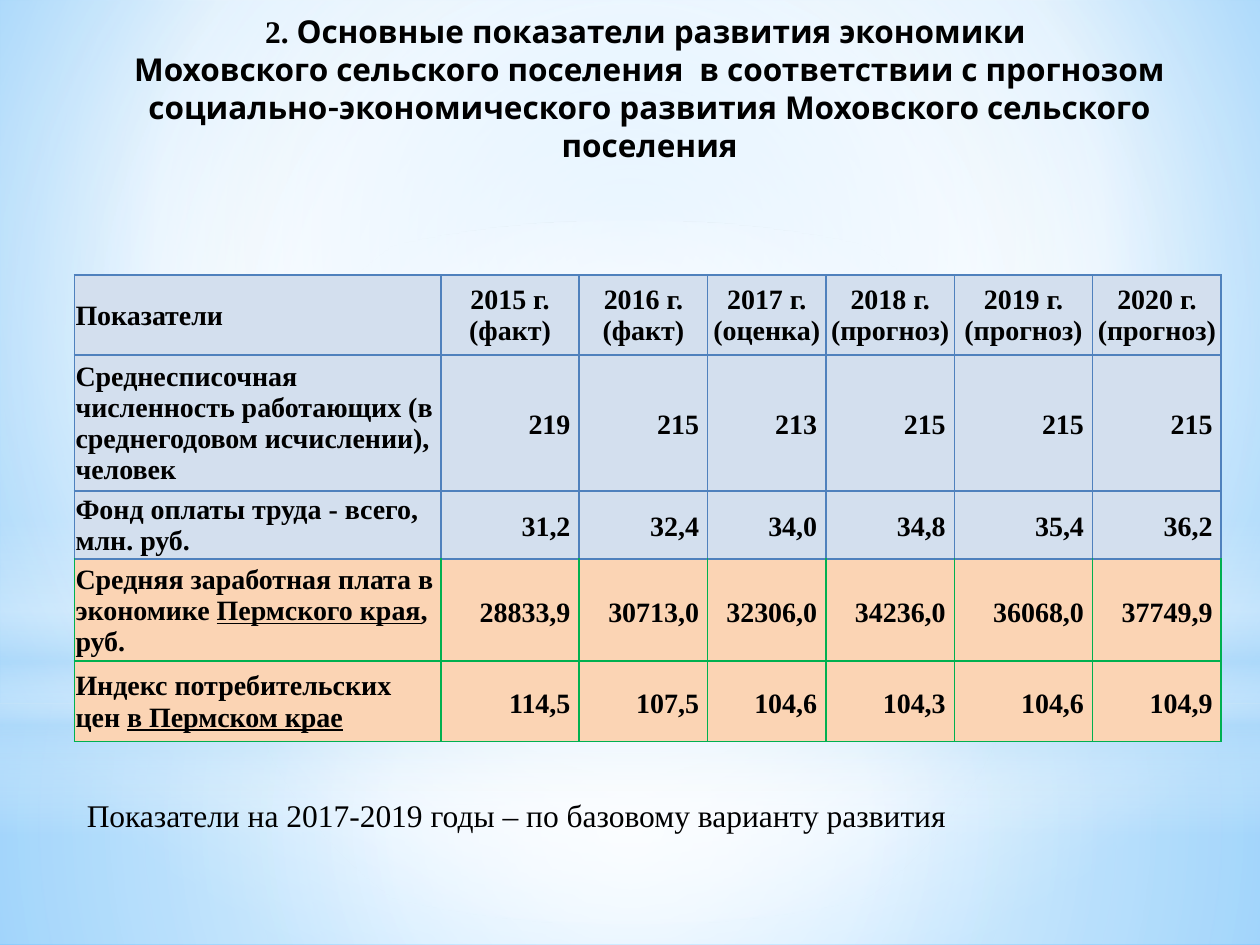
from lxml import etree
from pptx import Presentation
from pptx.dml.color import RGBColor
from pptx.enum import shapes, text
from pptx.oxml import ns
from pptx.util import Pt

SERIF, SANS = "Times New Roman", "Karla"
BLUE, GREEN = "4F81BD", "00B050"
PALE_BLUE, PEACH = "D3DFEE", "FBD4B4"
LEFT, CENTER, RIGHT = text.PP_ALIGN.LEFT, text.PP_ALIGN.CENTER, text.PP_ALIGN.RIGHT
MIDDLE = (50, 50, 50, 50)

BACKDROP = ([(0, "9ED5FF", 100), (60, "FFFFFF", 100), (100, "5BB9FF", 100)], (20, 10, 20, 60))
GLOWS = [
    ("RECTANGLE", 402, 138, [(0, "FFFFFF", 91), (37, "FFFFFF", 76), (100, "B4DCFA", 79)], MIDDLE),
    ("RECTANGLE", 0, 402, [(0, "FFFFFF", 89), (48, "FFFFFF", 62), (100, "B4DCFA", 79)], MIDDLE),
    ("RECTANGLE", 297, 180, [(0, "FFFFFF", 0), (29, "FFFFFF", 30), (45, "B4DCFA", 40),
                             (55, "FFFFFF", 26), (65, "B4DCFA", 60), (100, "FFFFFF", 0)], None),
    ("OVAL", 126, 402, [(0, "FFFFFF", 100), (56, "FFFFFF", 0)], MIDDLE),
]

TITLE = [
    [("2. ", SERIF), ("Основные показатели развития экономики ", SANS)],
    [("Моховского сельского поселения  в соответствии с прогнозом "
      "социально-экономического развития Моховского сельского поселения", SANS)],
]
NOTE = [[("Показатели на 2017-2019 годы – по базовому варианту развития", SERIF)]]

YEARS = [("2015", "факт"), ("2016", "факт"), ("2017", "оценка"),
         ("2018", "прогноз"), ("2019", "прогноз"), ("2020", "прогноз")]
ROWS = [
    (["Показатели"], [f"{year} г. ({kind})" for year, kind in YEARS]),
    (["Среднесписочная численность работающих (в среднегодовом исчислении), человек"],
     ["219", "215", "213", "215", "215", "215"]),
    (["Фонд оплаты труда - всего, млн. руб."],
     ["31,2", "32,4", "34,0", "34,8", "35,4", "36,2"]),
    (["Средняя заработная плата в экономике ", "Пермского края", ", руб."],
     ["28833,9", "30713,0", "32306,0", "34236,0", "36068,0", "37749,9"]),
    (["Индекс потребительских цен ", "в Пермском крае"],
     ["114,5", "107,5", "104,6", "104,3", "104,6", "104,9"]),
]
COL_WIDTHS = [209.5, 79, 73.5, 67.5, 73.5, 79, 73.5]
ROW_HEIGHTS = [46, 68.5, 24, 46, 46]
FIRST_GREEN_ROW = 3


def rgb(value):
    return RGBColor.from_string(value)


def assign(target, **values):
    for name, value in values.items():
        setattr(target, name, value)


def child(parent, tag, **attrs):
    return etree.SubElement(parent, ns.qn(tag), {k: str(v) for k, v in attrs.items()})


def gradient(fill, holder, stops, focus):
    fill.gradient()
    grad = holder.find(".//" + ns.qn("a:gradFill"))
    for old in list(grad):
        grad.remove(old)
    stop_list = child(grad, "a:gsLst")
    for position, color, alpha in stops:
        stop = child(stop_list, "a:gs", pos=position * 1000)
        child(child(stop, "a:srgbClr", val=color), "a:alpha", val=alpha * 1000)
    if focus:
        shade = child(grad, "a:path", path="circle")
        child(shade, "a:fillToRect", **{k: v * 1000 for k, v in zip("ltrb", focus)})
    else:
        child(grad, "a:lin", ang=90 * 60000, scaled=0)


def add_run(p, words, font, size, bold, underline=False):
    r = p.add_run()
    r.text = words
    assign(r.font, name=font, size=Pt(size), bold=bold, underline=underline)
    r.font.color.rgb = rgb("000000")


def add_text(s, box, paragraphs, align, bold, wrap):
    tf = s.shapes.add_textbox(*map(Pt, box)).text_frame
    assign(tf, word_wrap=wrap, auto_size=text.MSO_AUTO_SIZE.SHAPE_TO_FIT_TEXT)
    for i, runs in enumerate(paragraphs):
        p = tf.add_paragraph() if i else tf.paragraphs[0]
        p.alignment = align
        for words, font in runs:
            add_run(p, words, font, 18, bold)


def add_borders(cell, colors):
    tc_pr = cell._tc.get_or_add_tcPr()
    for i, (side, color) in enumerate(zip("LRTB", colors)):
        line = child(tc_pr, f"a:ln{side}", w=Pt(1))
        child(child(line, "a:solidFill"), "a:srgbClr", val=color)
        tc_pr.insert(i, line)


def fill_cell(cell, parts, row, col):
    is_value = row > 0 and col > 0
    green = row >= FIRST_GREEN_ROW
    side, top = (5, 0) if is_value else (0.7, 0.7)
    assign(cell, vertical_anchor=text.MSO_ANCHOR.MIDDLE, margin_left=Pt(side),
           margin_right=Pt(side), margin_top=Pt(top), margin_bottom=0)
    cell.fill.solid()
    cell.fill.fore_color.rgb = rgb(PEACH if green else PALE_BLUE)
    edge = GREEN if green else BLUE
    add_borders(cell, [edge, edge, BLUE if row == FIRST_GREEN_ROW else edge,
                       BLUE if row == FIRST_GREEN_ROW - 1 else edge])
    p = cell.text_frame.paragraphs[0]
    p.alignment = RIGHT if is_value else CENTER if col else LEFT
    if is_value:
        p.line_spacing = 1.15
    for i, words in enumerate(parts):
        add_run(p, words, SERIF, 16, True, i == 1)


def add_indicators(s):
    frame = s.shapes.add_table(len(ROWS), len(COL_WIDTHS), Pt(42.5), Pt(157),
                               Pt(sum(COL_WIDTHS)), Pt(sum(ROW_HEIGHTS)))
    table = frame.table
    assign(table, first_row=False, horz_banding=False)
    for column, width in zip(table.columns, COL_WIDTHS):
        column.width = Pt(width)
    for row, (label, values) in enumerate(ROWS):
        table.rows[row].height = Pt(ROW_HEIGHTS[row])
        for col, parts in enumerate([label] + [[v] for v in values]):
            fill_cell(table.cell(row, col), parts, row, col)


def main():
    prs = Presentation()
    assign(prs, slide_width=Pt(720), slide_height=Pt(540))
    s = prs.slides.add_slide(prs.slide_layouts[6])
    gradient(s.background.fill, s.element, *BACKDROP)
    for kind, top, height, stops, focus in GLOWS:
        sp = s.shapes.add_shape(shapes.MSO_SHAPE[kind], 0, Pt(top), Pt(720), Pt(height))
        sp.shadow.inherit = False
        sp.line.fill.background()
        gradient(sp.fill, sp.element, stops, focus)
    add_text(s, (48, 3.5, 646.5, 72.5), TITLE, CENTER, True, True)
    add_text(s, (42.5, 451.5, 510.5, 29), NOTE, LEFT, False, False)
    add_indicators(s)
    prs.save("out.pptx")


if __name__ == "__main__":
    main()
